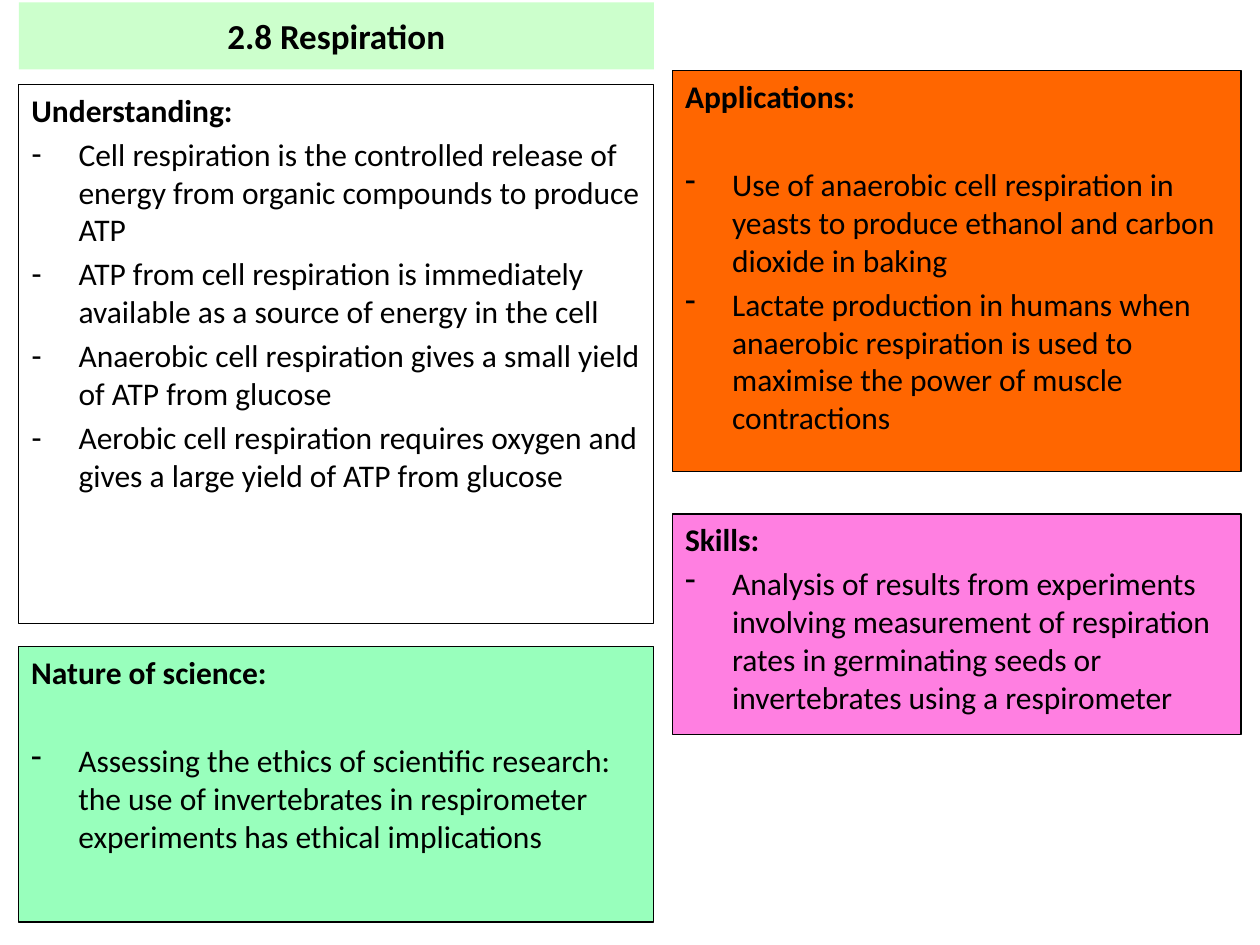
import pptx
import pptx.dml.color
import pptx.enum.text
import pptx.oxml.ns
import pptx.util
from lxml import etree

Cm, Pt = pptx.util.Cm, pptx.util.Pt
LEFT_COLUMN = (0.38, 12.8)
RIGHT_COLUMN = (13.56, 11.46)
INDENT = Cm(0.95)


def colour(value):
    return pptx.dml.color.RGBColor.from_string(value)


def add_span(para, text, size, bold):
    span = para.add_run()
    span.text = text
    span.font.name = "Calibri"
    span.font.size = Pt(size)
    span.font.bold = bold
    span.font.color.rgb = colour("000000")


deck = pptx.Presentation()
deck.slide_width, deck.slide_height = Cm(25.4), Cm(19.05)
page = deck.slides.add_slide(deck.slide_layouts[1])

# Title bar
title = page.shapes.title
title.left, title.top, title.width, title.height = Cm(0.38), Cm(0.05), Cm(12.8), Cm(1.35)
title.fill.solid()
title.fill.fore_color.rgb = colour("CCFFCC")
title.text_frame.auto_size = pptx.enum.text.MSO_AUTO_SIZE.NONE
title.text_frame.vertical_anchor = pptx.enum.text.MSO_ANCHOR.MIDDLE
title_para = title.text_frame.paragraphs[0]
title_para.alignment = pptx.enum.text.PP_ALIGN.CENTER
add_span(title_para, "2.8 Respiration", 20, True)

# Panels: heading, column, top, height, fill, space before the list, list items
panels = [
    ("Understanding:", LEFT_COLUMN, 1.7, 10.87, None, 3.6, [
        "Cell respiration is the controlled release of energy from organic compounds to produce ATP",
        "ATP from cell respiration is immediately available as a source of energy in the cell",
        "Anaerobic cell respiration gives a small yield of ATP from glucose",
        "Aerobic cell respiration requires oxygen and gives a large yield of ATP from glucose",
    ]),
    ("Applications:", RIGHT_COLUMN, 1.42, 8.08, "FF6600", 29, [
        "Use of anaerobic cell respiration in yeasts to produce ethanol and carbon dioxide in baking",
        "Lactate production in humans when anaerobic respiration is used to maximise the power of "
        "muscle contractions",
    ]),
    ("Skills:", RIGHT_COLUMN, 10.36, 4.45, "FF7FE1", 3.6, [
        "Analysis of results from experiments involving measurement of respiration rates in "
        "germinating seeds or invertebrates using a respirometer",
    ]),
    ("Nature of science:", LEFT_COLUMN, 13.03, 5.56, "98FFBC", 29, [
        "Assessing the ethics of scientific research: the use of invertebrates in respirometer "
        "experiments has ethical implications",
    ]),
]

for heading, (left, width), top, height, fill, list_gap, items in panels:
    # The main panel is the body placeholder, the others are text boxes
    place = Cm(left), Cm(top), Cm(width), Cm(height)
    if heading == "Understanding:":
        box = page.placeholders[1]
        box.left, box.top, box.width, box.height = place
    else:
        box = page.shapes.add_textbox(*place)
    if fill:
        box.fill.solid()
        box.fill.fore_color.rgb = colour(fill)
    box.line.color.rgb = colour("000000")
    box.line.width = Pt(0.75)

    frame = box.text_frame
    frame.word_wrap = True
    frame.auto_size = pptx.enum.text.MSO_AUTO_SIZE.NONE
    frame.vertical_anchor = pptx.enum.text.MSO_ANCHOR.TOP

    # Heading without a bullet, then the dashed list
    for number, text in enumerate([heading] + items):
        para = frame.add_paragraph() if number else frame.paragraphs[0]
        para.space_before = Pt((0, list_gap)[number] if number < 2 else 3.6)
        properties = para._p.get_or_add_pPr()
        properties.set("marL", str(INDENT if number else 0))
        properties.set("indent", str(-INDENT if number else 0))
        bullet = etree.SubElement(properties, pptx.oxml.ns.qn("a:buChar" if number else "a:buNone"))
        if number:
            bullet.set("char", "-")
        add_span(para, text, 18, number == 0)

deck.save("out.pptx")
